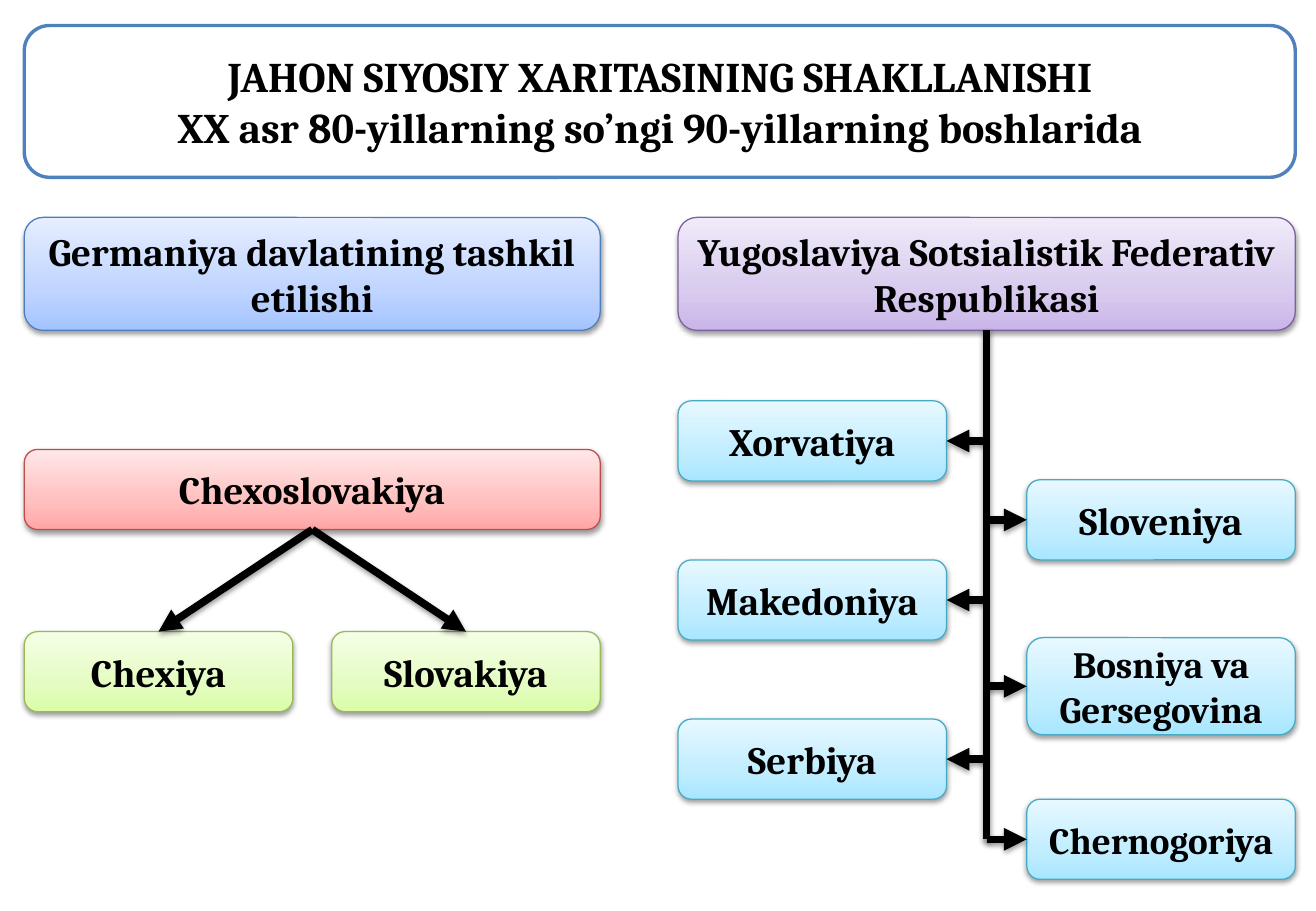
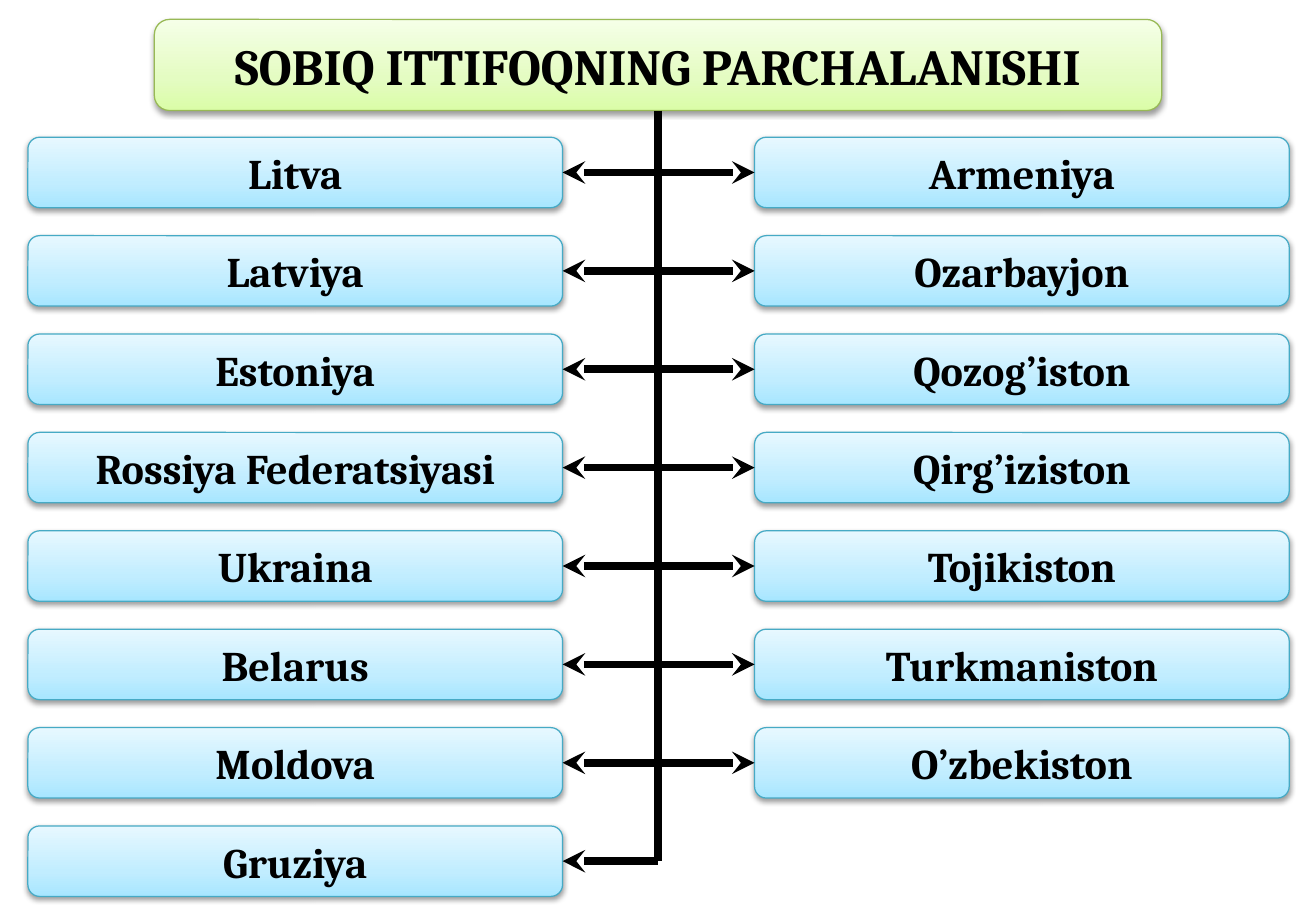
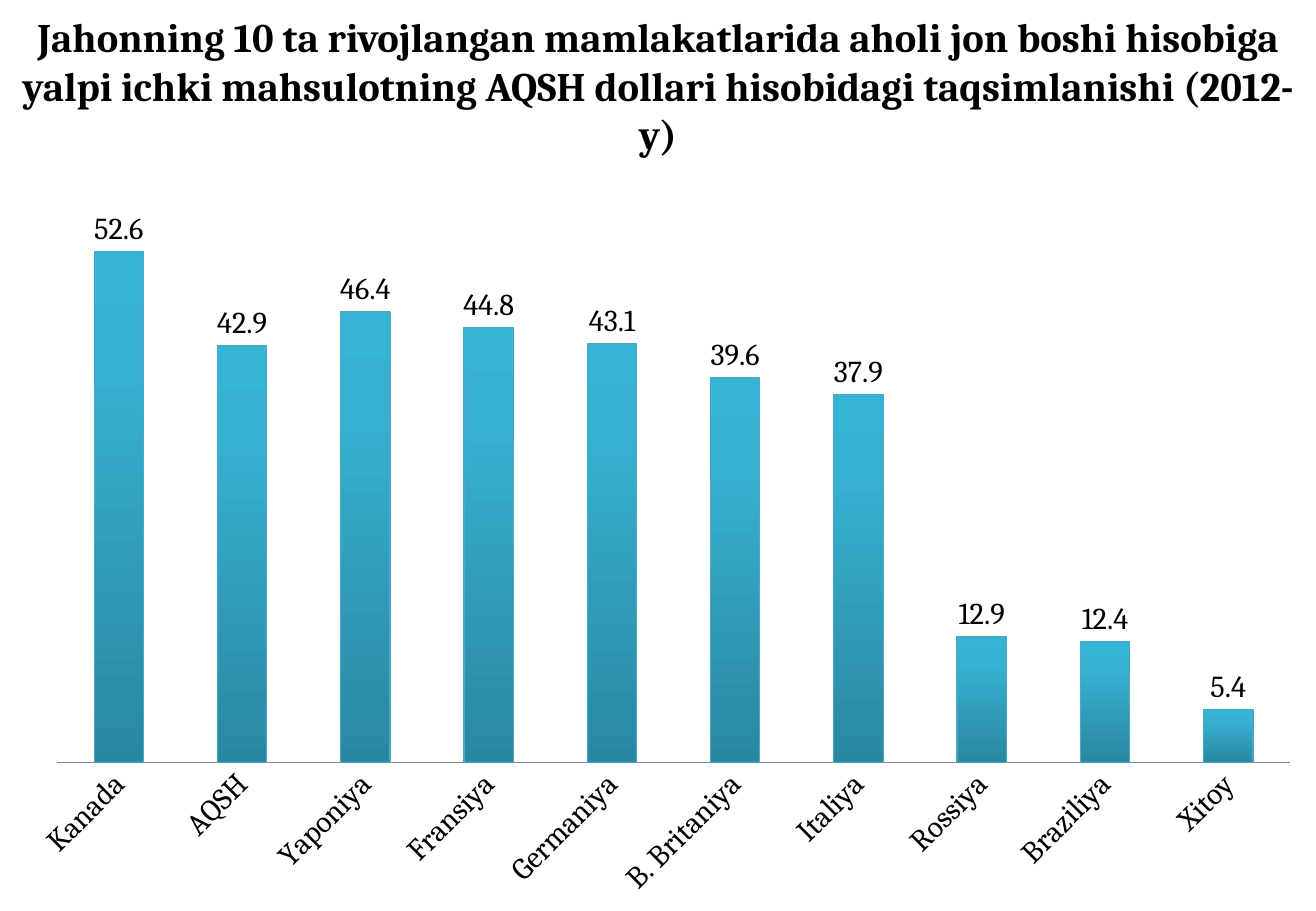
"""Builds three slides on the changing political map of the world and GDP per person."""
from dataclasses import dataclass

from lxml.etree import SubElement
from pptx import Presentation
from pptx.chart.data import CategoryChartData
from pptx.dml.color import RGBColor
from pptx.enum.chart import XL_CHART_TYPE, XL_LABEL_POSITION, XL_TICK_MARK
from pptx.enum.shapes import MSO_CONNECTOR, MSO_SHAPE
from pptx.enum.text import MSO_ANCHOR, MSO_AUTO_SIZE, PP_ALIGN
from pptx.oxml.ns import qn
from pptx.util import Inches, Pt


@dataclass(frozen=True)
class Tone:
    line: str
    stops: tuple


class Theme:
    font = "Cambria"
    ink = "000000"
    paper = "FFFFFF"
    frame = "4F81BD"
    axis = "868686"
    blue = Tone("4B7EBC", ((0, "A4C4FF"), (35, "BFD4FF"), (100, "E6EEFF")))
    red = Tone("BF4C48", ((0, "FFA6A5"), (35, "FFC0BF"), (100, "FFE7E7")))
    green = Tone("98B955", ((0, "DAFDA7"), (35, "E4FCC2"), (100, "F5FFE7")))
    purple = Tone("7D60A0", ((0, "C9B5E8"), (35, "D8CBEE"), (100, "F0EAF9")))
    cyan = Tone("46AAC5", ((0, "A7E6FF"), (35, "C1EDFF"), (100, "E7F8FF")))
    bars = Tone("46AAC5", ((0, "2A88A2"), (80, "37B1D2"), (100, "34B4D6")))
    headline, title, heading, country, republic, long_name, chart = 30, 24, 25, 25, 23, 22, 18
    thin, border, arrow = 0.75, 2, 4.5


WIDTH, HEIGHT = 10.83, 7.5

MAP_TITLE = ["JAHON SIYOSIY XARITASINING SHAKLLANISHI",
             "XX asr 80-yillarning so’ngi 90-yillarning boshlarida"]
GERMANY = "Germaniya davlatining tashkil etilishi"
CZECHOSLOVAKIA = "Chexoslovakiya"
CZECH_SUCCESSORS = ["Chexiya", "Slovakiya"]
YUGOSLAVIA = "Yugoslaviya Sotsialistik Federativ Respublikasi"
YUGOSLAV_LEFT = [("Xorvatiya", 3.3), ("Makedoniya", 4.61), ("Serbiya", 5.92)]
YUGOSLAV_RIGHT = [("Sloveniya", 3.95, 0.66, Theme.republic),
                  ("Bosniya va Gersegovina", 5.25, 0.8, Theme.long_name),
                  ("Chernogoriya", 6.58, 0.66, Theme.long_name)]

UNION_TITLE = "SOBIQ ITTIFOQNING PARCHALANISHI"
UNION_LEFT = ["Litva", "Latviya", "Estoniya", "Rossiya Federatsiyasi",
              "Ukraina", "Belarus", "Moldova", "Gruziya"]
UNION_RIGHT = ["Armeniya", "Ozarbayjon", "Qozog’iston", "Qirg’iziston",
               "Tojikiston", "Turkmaniston", "O’zbekiston"]

GDP_TITLE = ("Jahonning 10 ta rivojlangan mamlakatlarida aholi jon boshi hisobiga "
             "yalpi ichki mahsulotning AQSH dollari hisobidagi taqsimlanishi (2012-y)")
GDP = {"Kanada": 52.6, "AQSH": 42.9, "Yaponiya": 46.4, "Fransiya": 44.8,
       "Germaniya": 43.1, "B. Britaniya": 39.6, "Italiya": 37.9,
       "Rossiya": 12.9, "Braziliya": 12.4, "Xitoy": 5.4}

TOP, LEFT, BOTTOM, RIGHT = range(4)


def color(value):
    return RGBColor.from_string(value)


def fill_gradient(fill, owner, stops):
    fill.gradient()
    fill.gradient_angle = 90
    stop_list = next(owner.iter(qn("a:gsLst")))
    for stop in list(stop_list):
        stop_list.remove(stop)
    for position, value in stops:
        stop = SubElement(stop_list, qn("a:gs"), pos=str(position * 1000))
        SubElement(stop, qn("a:srgbClr"), val=value)


def set_line(line, value, width):
    line.color.rgb = color(value)
    line.width = Pt(width)


def add_shadow(effects):
    shadow = SubElement(effects, qn("a:outerShdw"), blurRad="40000", dist="20000",
                        dir="5400000", rotWithShape="0")
    tint = SubElement(shadow, qn("a:srgbClr"), val=Theme.ink)
    SubElement(tint, qn("a:alpha"), val="38000")


def write(frame, lines, size):
    frame.word_wrap = True
    for index, line in enumerate(lines):
        paragraph = frame.add_paragraph() if index else frame.paragraphs[0]
        paragraph.text = line
        paragraph.alignment = PP_ALIGN.CENTER
        font = paragraph.font
        font.name, font.size, font.bold = Theme.font, Pt(size), True
        font.color.rgb = color(Theme.ink)


def add_box(slide, lines, place, size, tone=None):
    box = slide.shapes.add_shape(MSO_SHAPE.ROUNDED_RECTANGLE, *map(Inches, place))
    box.shadow.inherit = False
    if tone:
        fill_gradient(box.fill, box.element, tone.stops)
        set_line(box.line, tone.line, Theme.thin)
        add_shadow(next(box.element.iter(qn("a:effectLst"))))
    else:
        box.fill.solid()
        box.fill.fore_color.rgb = color(Theme.paper)
        set_line(box.line, Theme.frame, Theme.border)
    box.text_frame.vertical_anchor = MSO_ANCHOR.MIDDLE
    write(box.text_frame, lines, size)
    return box


def site(box, side):
    across, down = {TOP: (1, 0), LEFT: (0, 1), BOTTOM: (1, 2), RIGHT: (2, 1)}[side]
    return box.left + box.width * across // 2, box.top + box.height * down // 2


def add_link(slide, start, end, head=None, tail=None, shadow=False):
    """Each end is a (box, side) pair or a point (x, y)."""
    joined = [isinstance(spot[0], int) is False for spot in (start, end)]
    points = [site(*spot) if join else spot for spot, join in zip((start, end), joined)]
    link = slide.shapes.add_connector(MSO_CONNECTOR.STRAIGHT, *points[0], *points[1])
    if joined[0]:
        link.begin_connect(*start)
    if joined[1]:
        link.end_connect(*end)
    set_line(link.line, Theme.ink, Theme.arrow)
    outline = next(link.element.iter(qn("a:ln")))
    for tag, kind in (("a:headEnd", head), ("a:tailEnd", tail)):
        if kind:
            SubElement(outline, qn(tag), type=kind)
    effects = SubElement(link.element.spPr, qn("a:effectLst"))
    if shadow:
        add_shadow(effects)


def build_map(slide):
    left, column, small, height = 0.2, 4.74, 2.21, 0.66
    add_box(slide, [GERMANY], (left, 1.79, column, 0.93), Theme.republic, Theme.blue)
    federation = add_box(slide, [CZECHOSLOVAKIA], (left, 3.7, column, height),
                         Theme.republic, Theme.red)
    for index, name in enumerate(CZECH_SUCCESSORS):
        x = left + index * (column - small)
        successor = add_box(slide, [name], (x, 5.2, small, height),
                            Theme.republic, Theme.green)
        add_link(slide, (federation, BOTTOM), (successor, TOP), tail="triangle", shadow=True)

    yugoslavia = add_box(slide, [YUGOSLAVIA], (5.58, 1.79, 5.08, 0.93),
                         Theme.republic, Theme.purple)
    west = [add_box(slide, [name], (5.58, y, small, height), Theme.republic, Theme.cyan)
            for name, y in YUGOSLAV_LEFT]
    east = [add_box(slide, [name], (8.45, y, small, tall), size, Theme.cyan)
            for name, y, tall, size in YUGOSLAV_RIGHT]
    trunk = site(yugoslavia, BOTTOM)[0]
    for republics, side in ((west, RIGHT), (east, LEFT)):
        for republic in republics:
            add_link(slide, (trunk, site(republic, side)[1]), (republic, side),
                     tail="triangle", shadow=True)
    add_link(slide, (yugoslavia, BOTTOM), (trunk, site(east[-1], LEFT)[1]), shadow=True)
    add_box(slide, MAP_TITLE, (left, 0.21, 10.46, 1.25), Theme.heading)


def build_union(slide):
    first, step, width, height = 1.13, 0.81, 4.4, 0.58
    union = add_box(slide, [UNION_TITLE], (1.27, 0.16, 8.29, 0.75),
                    Theme.headline, Theme.green)
    west, east = [[add_box(slide, [name], (x, first + row * step, width, height),
                           Theme.country, Theme.cyan)
                   for row, name in enumerate(names)]
                  for x, names in ((0.23, UNION_LEFT), (6.21, UNION_RIGHT))]
    foot = site(union, BOTTOM)[0], site(west[-1], RIGHT)[1]
    add_link(slide, (union, BOTTOM), foot)
    for west_state, east_state in zip(west, east):
        add_link(slide, (west_state, RIGHT), (east_state, LEFT), "stealth", "stealth")
    add_link(slide, foot, (west[-1], RIGHT), tail="stealth")


def build_gdp(slide):
    data = CategoryChartData()
    data.categories = list(GDP)
    data.add_series("Series 1", list(GDP.values()))
    chart = slide.shapes.add_chart(XL_CHART_TYPE.COLUMN_CLUSTERED,
                                   *map(Inches, (0.11, 1.36, 10.72, 6.14)), data).chart
    chart.has_legend = chart.has_title = False
    chart.font.name, chart.font.size = Theme.font, Pt(Theme.chart)
    chart.font.color.rgb = color(Theme.ink)

    values, countries = chart.value_axis, chart.category_axis
    values.visible = values.has_major_gridlines = False
    values.minimum_scale, values.maximum_scale = 0, 60
    countries.major_tick_mark = XL_TICK_MARK.NONE
    set_line(countries.format.line, Theme.axis, Theme.thin)

    plot = chart.plots[0]
    plot.gap_width, plot.vary_by_categories = 150, False
    plot.has_data_labels = True
    plot.data_labels.show_value = True
    plot.data_labels.position = XL_LABEL_POSITION.OUTSIDE_END
    bars = plot.series[0]
    fill_gradient(bars.format.fill, bars._element, Theme.bars.stops)
    set_line(bars.format.line, Theme.bars.line, Theme.thin)

    title = slide.shapes.add_textbox(*map(Inches, (0, 0.05, WIDTH, 1.31))).text_frame
    write(title, [GDP_TITLE], Theme.title)
    title.auto_size = MSO_AUTO_SIZE.SHAPE_TO_FIT_TEXT


def main():
    deck = Presentation()
    deck.slide_width, deck.slide_height = Inches(WIDTH), Inches(HEIGHT)
    for build in (build_map, build_union, build_gdp):
        build(deck.slides.add_slide(deck.slide_layouts[6]))
    deck.save("out.pptx")


if __name__ == "__main__":
    main()
